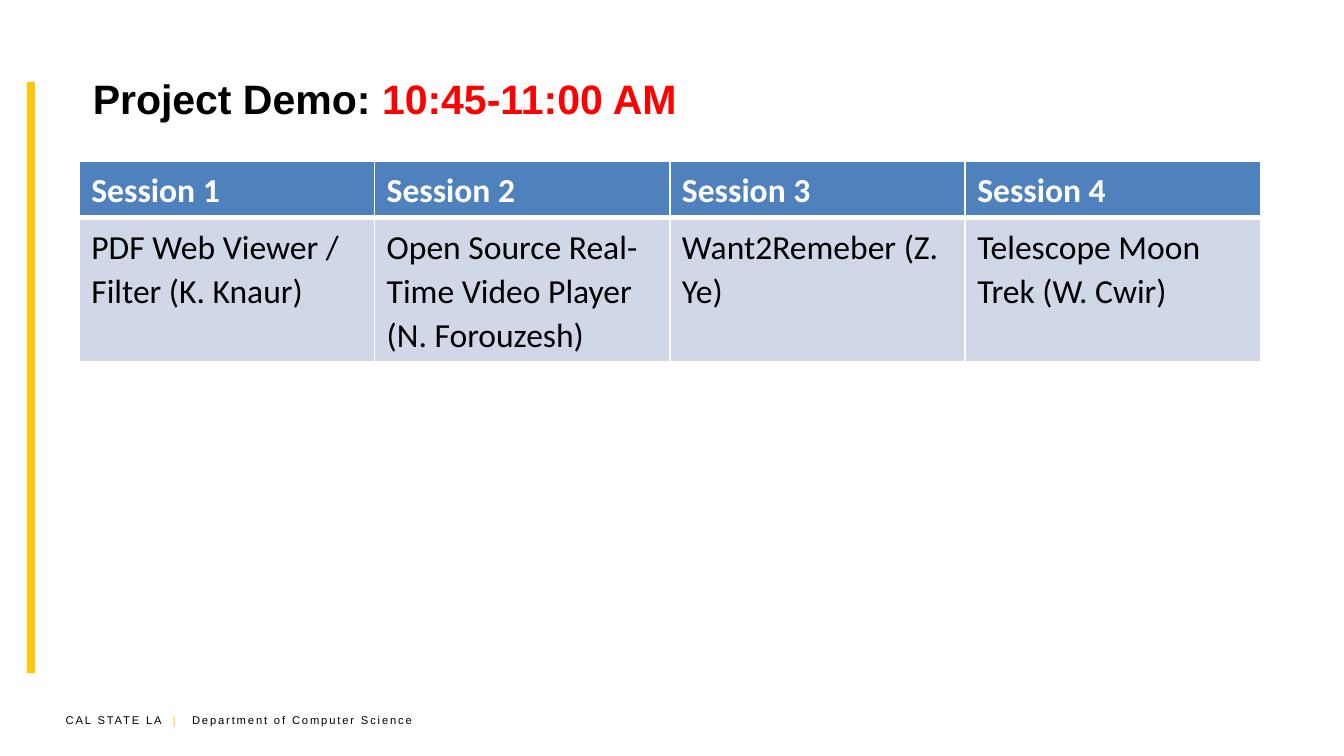
from lxml.etree import SubElement
from pptx import Presentation
from pptx.dml.color import RGBColor
from pptx.enum.shapes import MSO_SHAPE as Shape
from pptx.enum.text import MSO_ANCHOR as Anchor, MSO_AUTO_SIZE as AutoSize, PP_ALIGN as Align
from pptx.oxml.ns import qn
from pptx.util import Inches, Pt

BLACK, WHITE, RED, GOLD = "000000", "FFFFFF", "FF0000", "FCC90A"
HEADER_BLUE, BODY_BLUE = "4F81BD", "D0D8E8"

TITLE = [("Project Demo: ", BLACK), ("10:45-11:00 AM", RED)]
FOOTER = [("CAL STATE LA ", BLACK), (" |\t", GOLD), ("Department of Computer Science", BLACK)]
SESSIONS = [
    ("Session 1", "PDF Web Viewer / Filter (K. Knaur)"),
    ("Session 2", "Open Source Real-Time Video Player (N. Forouzesh)"),
    ("Session 3", "Want2Remeber (Z. Ye)"),
    ("Session 4", "Telescope Moon Trek (W. Cwir)"),
]
ROWS = [
    dict(height=0.4, fill=HEADER_BLUE, color=WHITE, bold=True, bottom=3),
    dict(height=1.07, fill=BODY_BLUE, color=BLACK, bold=False, bottom=1),
]


def paint(color_format, color):
    color_format.rgb = RGBColor.from_string(color)


def fill_with(fill, color):
    fill.solid()
    paint(fill.fore_color, color)


def place(shape, left, top, width, height):
    shape.left, shape.top = Inches(left), Inches(top)
    shape.width, shape.height = Inches(width), Inches(height)


def set_font(paragraph, name, size, bold=False):
    font = paragraph.font
    font.name, font.size, font.bold = name, Pt(size), bold


def add_runs(paragraph, parts):
    for text, color in parts:
        run = paragraph.add_run()
        run.text = text
        paint(run.font.color, color)


def add_tab(paragraph, position):
    tabs = SubElement(paragraph._p.get_or_add_pPr(), qn("a:tabLst"))
    SubElement(tabs, qn("a:tab"), pos=str(Inches(position)), algn="l")


def set_borders(cell, top, bottom):
    properties = cell._tc.get_or_add_tcPr()
    for index, (side, width) in enumerate([("L", 1), ("R", 1), ("T", top), ("B", bottom)]):
        line = properties.makeelement(qn(f"a:ln{side}"), {"w": str(Pt(width))})
        solid = SubElement(line, qn("a:solidFill"))
        SubElement(solid, qn("a:srgbClr"), val=WHITE)
        properties.insert(index, line)


def add_footer(slide):
    footer = slide.shapes.add_textbox(Inches(0.39), Inches(5.26), Inches(2.92), Inches(0.2))
    footer.text_frame.word_wrap = True
    paragraph = footer.text_frame.paragraphs[0]
    add_tab(paragraph, 0.94)
    set_font(paragraph, "Arial", 6)
    add_runs(paragraph, FOOTER)
    for run in paragraph.runs:
        run.font._element.set("spc", "100")


def add_bar(slide):
    bar = slide.shapes.add_shape(
        Shape.RECTANGLE, Inches(0.2), Inches(0.61), Inches(0.06), Inches(4.4))
    bar.shadow.inherit = False
    fill_with(bar.fill, GOLD)
    bar.line.fill.background()


def add_title(slide):
    title = slide.shapes.title
    place(title, 0.59, 0.26, 8.9, 0.94)
    frame = title.text_frame
    frame.auto_size = AutoSize.NONE
    frame.vertical_anchor = Anchor.MIDDLE
    paragraph = frame.paragraphs[0]
    paragraph.alignment = Align.LEFT
    set_font(paragraph, "Arial", 22, True)
    add_runs(paragraph, TITLE)


def add_sessions(slide):
    height = sum(row["height"] for row in ROWS)
    table = slide.shapes.add_table(
        len(ROWS), len(SESSIONS), Inches(0.59), Inches(1.2), Inches(8.79), Inches(height)).table
    table.horz_banding = False
    for r, style in enumerate(ROWS):
        table.rows[r].height = Inches(style["height"])
        top = ROWS[r - 1]["bottom"] if r else 1
        for c, session in enumerate(SESSIONS):
            cell = table.cell(r, c)
            cell.margin_left = cell.margin_right = Inches(0.09)
            cell.margin_top = cell.margin_bottom = Inches(0.05)
            fill_with(cell.fill, style["fill"])
            set_borders(cell, top, style["bottom"])
            paragraph = cell.text_frame.paragraphs[0]
            paragraph.line_spacing = 1.07
            paragraph.space_after = Pt(8)
            set_font(paragraph, "Calibri", 18, style["bold"])
            add_runs(paragraph, [(session[r], style["color"])])


def main():
    deck = Presentation()
    deck.slide_width = Inches(10)
    deck.slide_height = deck.slide_width * 9 // 16
    slide = deck.slides.add_slide(deck.slide_layouts[5])
    add_footer(slide)
    add_bar(slide)
    add_title(slide)
    add_sessions(slide)
    deck.save("out.pptx")


if __name__ == "__main__":
    main()
